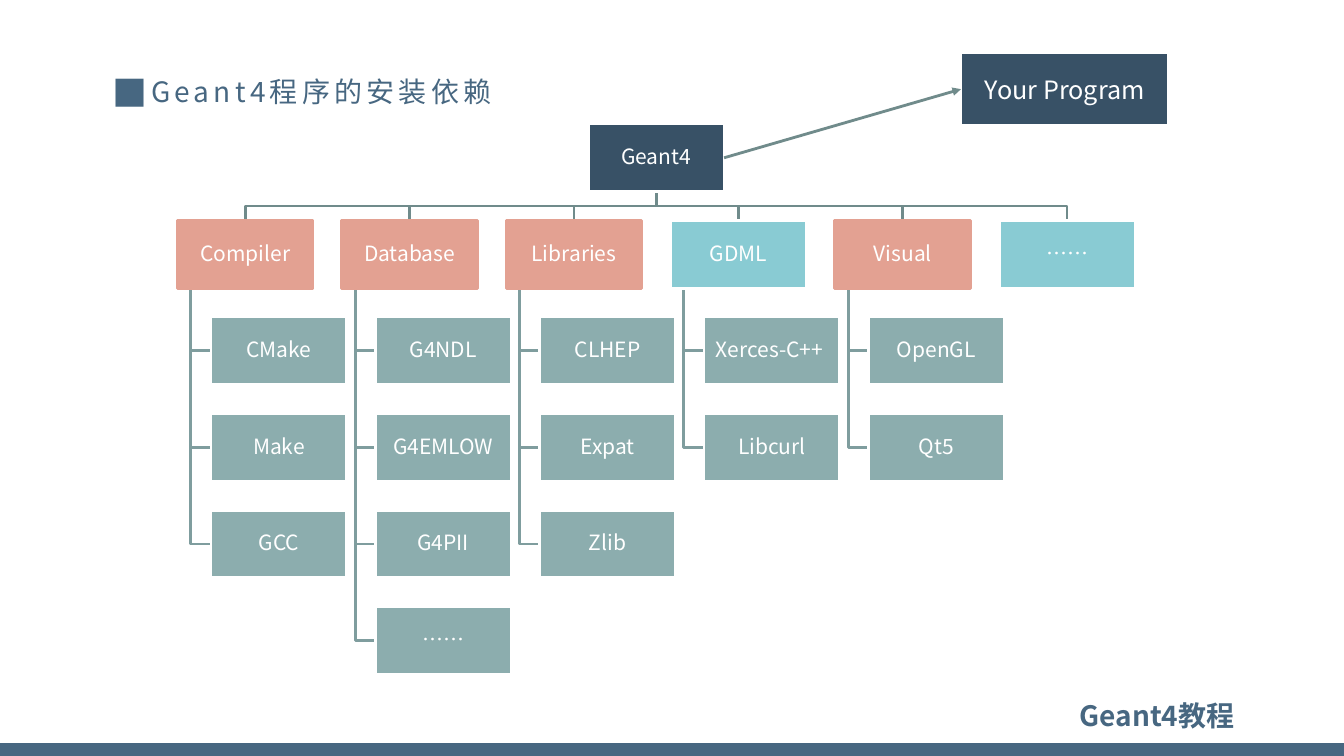
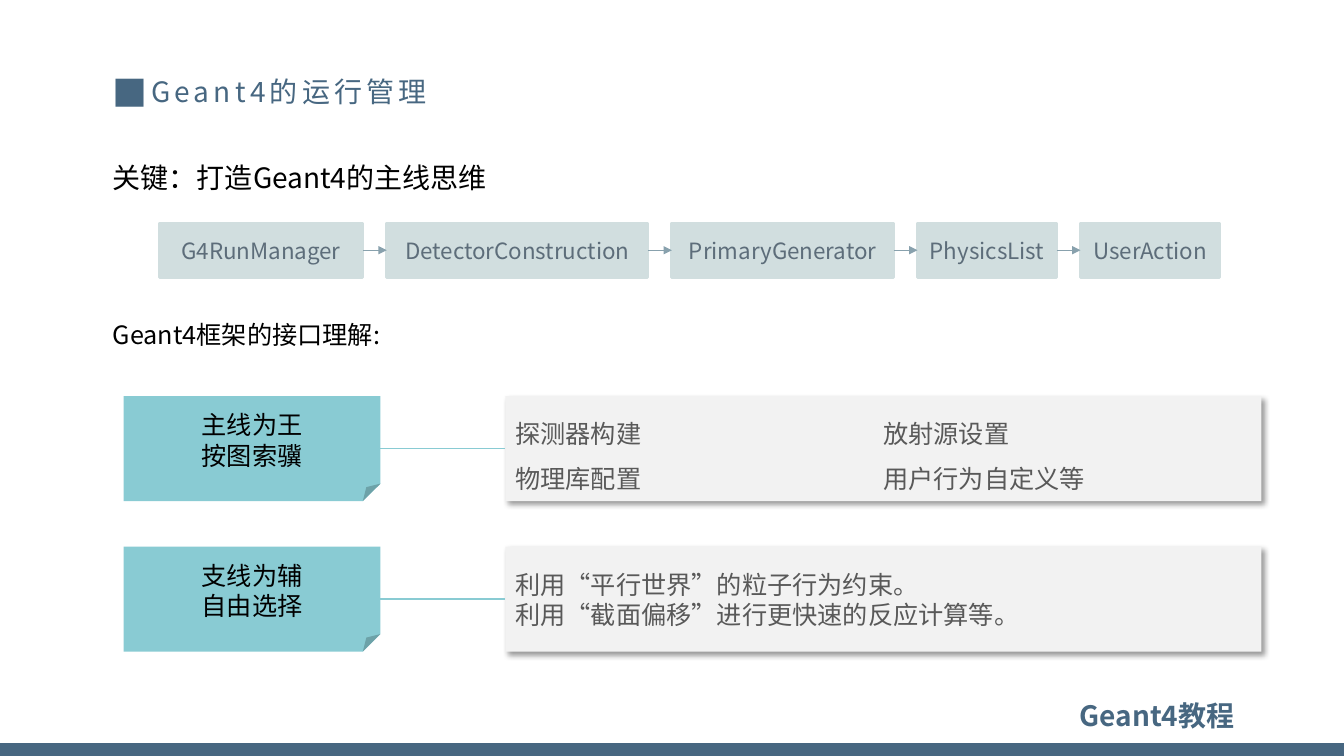
from pptx import Presentation
from pptx import util as u
from pptx.dml.color import RGBColor
from pptx.enum import shapes, text
from pptx.oxml import parse_xml
from pptx.oxml.ns import nsdecls, qn

FONT = "Noto Sans CJK SC"
COLORS = {
    "brand": "476781", "navy": "385166", "coral": "E3A192", "aqua": "89CBD3",
    "sage": "8CADAE", "bus": "708B8B", "branch": "7F9D9E", "mist": "D1DEDF",
    "slate": "5D6D7A", "arrow": "88A1AD", "panel": "F2F2F2", "gray": "595959",
    "black": "000000", "white": "FFFFFF",
}
ALIGN = text.PP_ALIGN
RECT = shapes.MSO_SHAPE.RECTANGLE
FOLDED = shapes.MSO_SHAPE.FOLDED_CORNER


def rgb(name):
    return RGBColor.from_string(COLORS[name])


def element(tag, **attributes):
    node = parse_xml(f"<{tag} {nsdecls('a')}/>")
    for key, value in attributes.items():
        node.set(key, str(value))
    return node


class Deck:
    """Style and current slide; all lengths are percent of the slide's size."""

    def __init__(self):
        self.prs = Presentation()
        self.prs.slide_width, self.prs.slide_height = u.Inches(13.33), u.Inches(7.5)
        self.layout = self.prs.slide_layouts.get_by_name("Title Only")
        self.slide = None

    def x(self, share):
        return round(self.prs.slide_width * share / 100)

    def y(self, share):
        return round(self.prs.slide_height * share / 100)

    def area(self, left, top, width, height):
        return self.x(left), self.y(top), self.x(width), self.y(height)

    # Slide frame: title, and a footer kept in the layout
    def new_slide(self, title):
        first = self.slide is None
        self.slide = self.prs.slides.add_slide(self.layout)
        if first:
            self.add_footer()
        heading = self.slide.shapes.title
        heading.left, heading.top, heading.width, heading.height = self.area(7.65, 8.1, 83.6, 8.5)
        self.fill_text(heading, [title], 20, "brand", ALIGN.LEFT, spacing=0.9)
        properties = heading.element.xpath(".//a:pPr")[0]
        indent = u.Inches(0.38)
        properties.set("marL", str(indent))
        properties.set("indent", str(-indent))
        properties.append(element("a:buSzPct", val=125000))
        properties.append(element("a:buFont", typeface=FONT))
        properties.append(element("a:buChar", char="■"))
        heading.element.xpath(".//a:rPr")[0].set("spc", "300")

    def add_footer(self):
        band = self.box((0, 98.3, 100, 1.7), "brand")
        course = self.label((71.5, 91.7, 21.1, 5.9), "Geant4教程", 20, "brand",
                            ALIGN.RIGHT, bold=True)
        for part in (band, course):
            self.layout.shapes.element.append(part.element)

    # Text
    def fill_text(self, shape, lines, size, color, align, spacing=None, bold=None,
                  anchor=text.MSO_ANCHOR.MIDDLE, inset=None, columns=1):
        frame = shape.text_frame
        frame.word_wrap = True
        frame.auto_size = text.MSO_AUTO_SIZE.NONE
        frame.vertical_anchor = anchor
        if inset is not None:
            frame.margin_left = frame.margin_right = u.Inches(inset)
            frame.margin_top = frame.margin_bottom = u.Inches(inset)
        if columns > 1:
            shape.element.xpath(".//a:bodyPr")[0].set("numCol", str(columns))
        for index, line in enumerate(lines):
            paragraph = frame.add_paragraph() if index else frame.paragraphs[0]
            paragraph.alignment = align
            if spacing:
                paragraph.line_spacing = spacing
            run = paragraph.add_run()
            run.text = line
            run.font.name, run.font.size, run.font.bold = FONT, u.Pt(size), bold
            run.font.color.rgb = rgb(color)
        for latin in shape.element.xpath(".//a:rPr/a:latin"):
            latin.addnext(element("a:ea", typeface=FONT))

    def label(self, area, line, size, color, align, **style):
        shape = self.slide.shapes.add_textbox(*self.area(*area))
        self.fill_text(shape, [line], size, color, align, anchor=text.MSO_ANCHOR.TOP, **style)
        return shape

    # Boxes
    def box(self, area, fill, border=None, kind=RECT):
        shape = self.slide.shapes.add_shape(kind, *self.area(*area))
        shape.shadow.inherit = False
        shape.fill.solid()
        shape.fill.fore_color.rgb = rgb(fill)
        if border:
            shape.line.color.rgb = rgb(border)
            shape.line.width = u.Pt(2)
        else:
            shape.line.fill.background()
        return shape

    def node(self, area, name, fill, border="white", size=15, spacing=0.9):
        shape = self.box(area, fill, border)
        self.fill_text(shape, [name], size, "white", ALIGN.CENTER, spacing, inset=0.01)
        return shape

    def drop_shadow(self, shape):
        effects = shape.element.spPr.find(qn("a:effectLst"))
        shadow = element("a:outerShdw", blurRad=u.Pt(4), dist=u.Pt(3), dir=45 * 60000,
                         algn="tl", rotWithShape=0)
        black = element("a:srgbClr", val=COLORS["black"])
        black.append(element("a:alpha", val=40000))
        shadow.append(black)
        effects.append(shadow)

    # Lines
    def bent_line(self, points, color):
        start, *rest = [(self.x(left), self.y(top)) for left, top in points]
        builder = self.slide.shapes.build_freeform(*start)
        builder.add_line_segments(rest, close=False)
        line = builder.convert_to_shape()
        line.shadow.inherit = False
        line.fill.background()
        line.line.color.rgb = rgb(color)
        line.line.width = u.Pt(2)

    def join(self, source, target, color, width=1, arrow=False):
        line = self.slide.shapes.add_connector(shapes.MSO_CONNECTOR.STRAIGHT, 0, 0, 0, 0)
        line.begin_connect(source, 3)
        line.end_connect(target, 1)
        line.line.color.rgb = rgb(color)
        line.line.width = u.Pt(width)
        if arrow:
            line.element.spPr.find(qn("a:ln")).append(element("a:tailEnd", type="triangle"))
        line.element.spPr.append(element("a:effectLst"))


def dependencies(deck):
    deck.new_slide("Geant4程序的安装依赖")
    groups = [
        ("Compiler", "coral", ["CMake", "Make", "GCC"]),
        ("Database", "coral", ["G4NDL", "G4EMLOW", "G4PII", "……"]),
        ("Libraries", "coral", ["CLHEP", "Expat", "Zlib"]),
        ("GDML", "aqua", ["Xerces-C++ ", "Libcurl"]),
        ("Visual", "coral", ["OpenGL", "Qt5"]),
        ("……", "aqua", []),
    ]
    left, top, column, row = 13.2, 16.4, 12.23, 12.77
    width, height, indent, trunk = 10.1, 8.95, 2.5, 1

    def cell(col, level, shift=0):
        return left + col * column + shift, top + level * row, width, height

    # Lines of the tree
    root = cell((len(groups) - 1) / 2, 0)
    root_x, root_bottom = root[0] + width / 2, top + height
    bus_y = (root_bottom + top + row) / 2
    for col, (_, _, members) in enumerate(groups):
        group_left, group_top, _, _ = cell(col, 1)
        group_x = group_left + width / 2
        deck.bent_line([(root_x, root_bottom), (root_x, bus_y),
                        (group_x, bus_y), (group_x, group_top)], "bus")
        for level in range(2, len(members) + 2):
            middle = top + level * row + height / 2
            deck.bent_line([(group_left + trunk, group_top + height),
                            (group_left + trunk, middle),
                            (group_left + indent, middle)], "branch")

    # Boxes of the tree
    toolkit = deck.node(root, "Geant4", "navy")
    for col, (group, fill, members) in enumerate(groups):
        deck.node(cell(col, 1), group, fill, "coral" if fill == "coral" else "white")
        for level, member in enumerate(members, 2):
            deck.node(cell(col, level, indent), member, "sage")

    # The program that uses the toolkit
    program = deck.node((71.5, 6.95, 15.45, 9.7), "Your Program", "navy", size=18, spacing=None)
    deck.join(toolkit, program, "bus", 2, arrow=True)


def run_management(deck):
    deck.new_slide("Geant4的运行管理")
    deck.label((7.65, 18.3, 66.4, 7.3), "关键：打造Geant4的主线思维", 20, "black",
               ALIGN.JUSTIFY, spacing=1.5)
    deck.label((7.65, 41.6, 87, 5.3), "Geant4框架的接口理解:", 18, "black", ALIGN.JUSTIFY)

    # Chain of classes
    left, gap, previous = 11.85, 1.78, None
    for name, width in [("G4RunManager", 15.15), ("DetectorConstruction", 19.43),
                        ("PrimaryGenerator", 16.5), ("PhysicsList", 10.35),
                        ("UserAction", 10.35)]:
        step = deck.box((left, 29.5, width, 7.2), "mist", "mist")
        deck.fill_text(step, [name], 16, "slate", ALIGN.CENTER)
        if previous:
            deck.join(previous, step, "arrow", arrow=True)
        previous = step
        left += width + gap

    # Principles and what they cover
    principles = [
        (["主线为王", "按图索骥"],
         ["探测器构建", "物理库配置", "放射源设置", "用户行为自定义等"], 1.5, 2),
        (["支线为辅", "自由选择"],
         ["利用“平行世界”的粒子行为约束。", "利用“截面偏移”进行更快速的反应计算等。"], None, 1),
    ]
    for index, (motto, details, spacing, columns) in enumerate(principles):
        top, height = 52.4 + index * 19.9, 13.9
        note = deck.box((9.2, top, 19.1, height), "aqua", kind=FOLDED)
        deck.fill_text(note, motto, 18, "black", ALIGN.CENTER)
        panel = deck.box((37.6, top, 56.25, height), "panel")
        deck.drop_shadow(panel)
        deck.fill_text(panel, details, 18, "gray", ALIGN.LEFT, spacing, columns=columns)
        deck.join(note, panel, "aqua")


def main():
    deck = Deck()
    dependencies(deck)
    run_management(deck)
    deck.prs.save("out.pptx")


if __name__ == "__main__":
    main()
